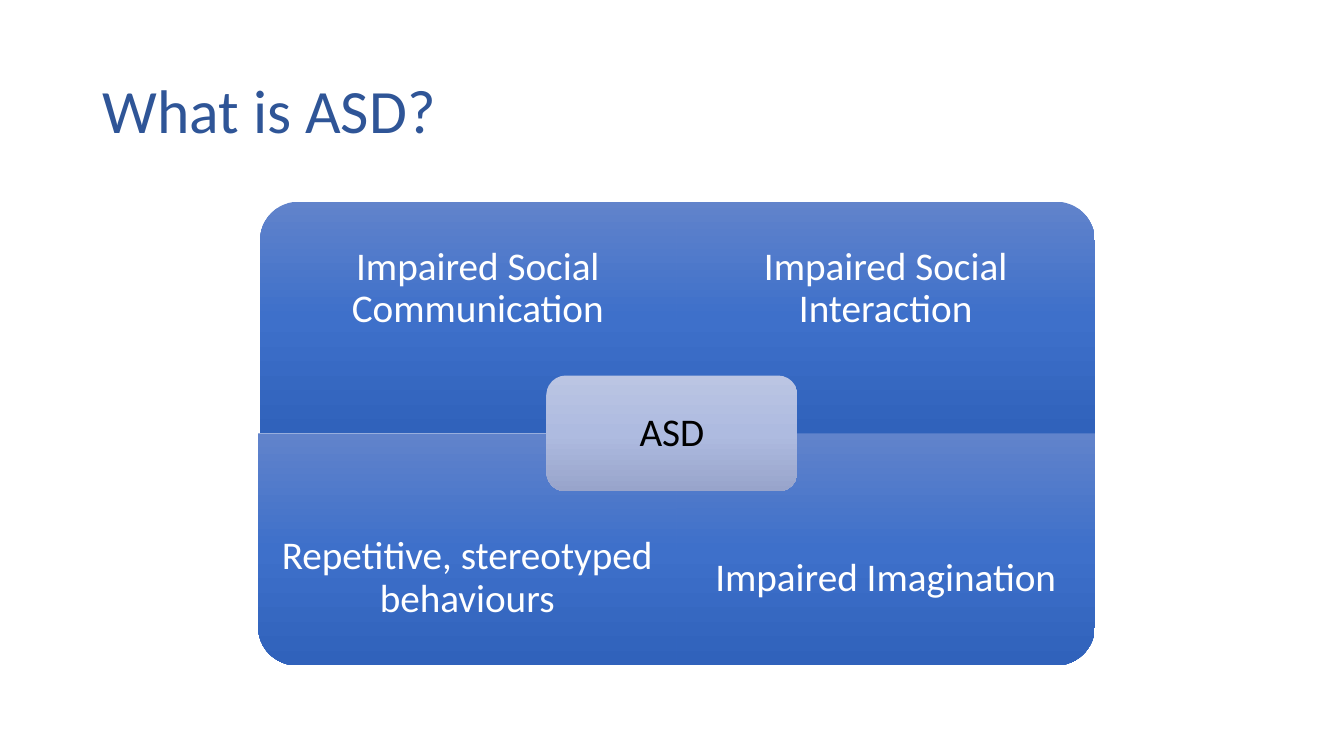
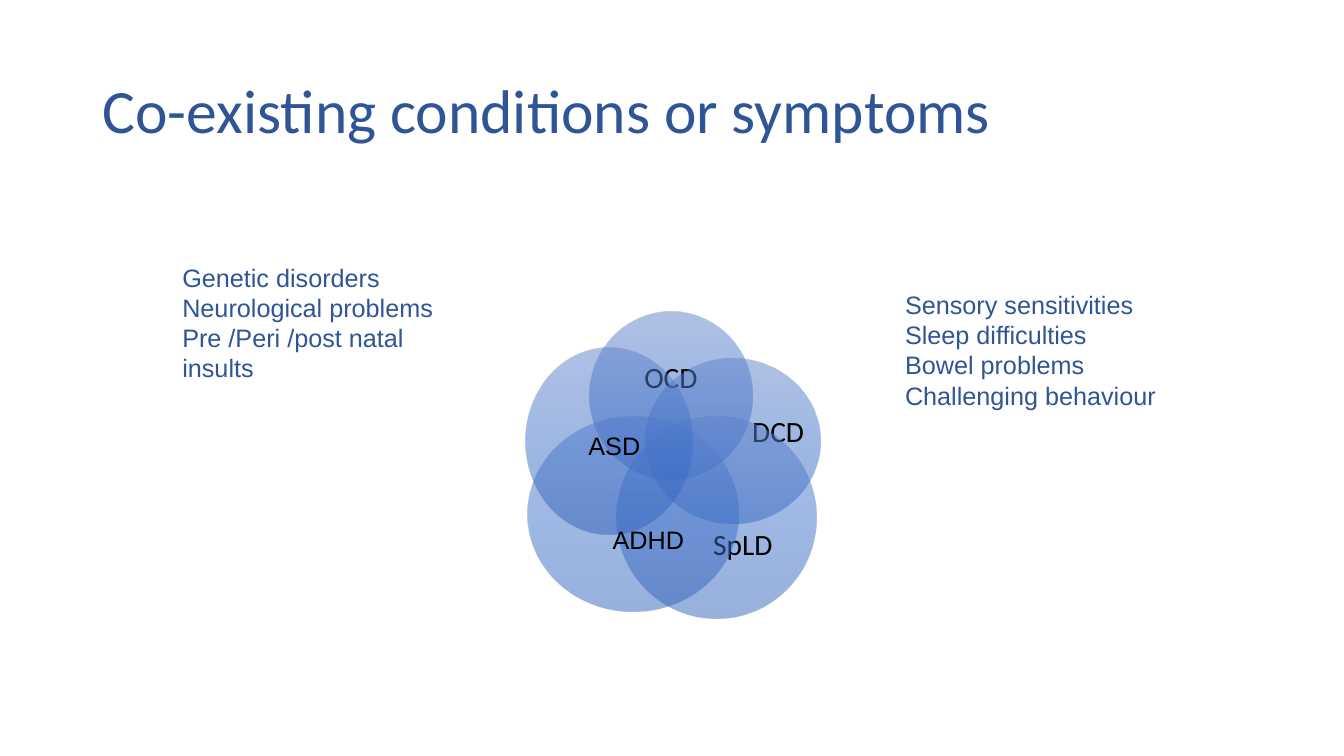
from lxml.etree import SubElement
from pptx import Presentation
from pptx.dml.color import RGBColor
from pptx.enum.shapes import MSO_SHAPE as SHAPE
from pptx.enum.text import MSO_ANCHOR as ANCHOR, PP_ALIGN as ALIGN
from pptx.oxml.ns import qn
from pptx.util import Inches, Pt

W, H = Inches(13.333), Inches(7.5)

COLORS = {"title": "2F5597", "light": "FFFFFF", "dark": "000000"}
BLUE = ("6183CB", "3E70CA", "3062BB")
PALE = ("BBC5E3", "AEBBE0", "98A4CB")

TITLE = {"size": 44, "font": "Calibri", "color": "title", "line_spacing": 0.9,
         "anchor": ANCHOR.MIDDLE}
CENTERED = {"font": "Calibri", "alignment": ALIGN.CENTER, "line_spacing": 0.9,
            "anchor": ANCHOR.MIDDLE}
QUADRANT = {**CENTERED, "size": 28, "color": "light", "inset": 0.22}
CORE = {**CENTERED, "size": 28, "color": "dark", "inset": 0.12}
LABEL = {**CENTERED, "size": 21, "color": "dark", "inset": 0, "wrap": False}
PLAIN = {"size": 18, "font": "Arial", "color": "dark"}
NOTE = {**PLAIN, "color": "title"}


def share(x, y, w, h):
    """Turn percentages of the slide's size into lengths."""
    return [int(size * part / 100) for size, part in zip((W, H, W, H), (x, y, w, h))]


def write(sp, lines, fmt):
    tf = sp.text_frame
    tf.word_wrap = fmt.get("wrap", True)
    tf.vertical_anchor = fmt.get("anchor", ANCHOR.TOP)
    if "inset" in fmt:
        for side in ("left", "right", "top", "bottom"):
            setattr(tf, f"margin_{side}", Inches(fmt["inset"]))
    for i, line in enumerate(lines):
        p = tf.add_paragraph() if i else tf.paragraphs[0]
        for name in ("alignment", "line_spacing"):
            setattr(p, name, fmt.get(name))
        r = p.add_run()
        r.text = line
        for name, value in {"size": Pt(fmt["size"]), "name": fmt["font"]}.items():
            setattr(r.font, name, value)
        r.font.color.rgb = RGBColor.from_string(COLORS[fmt["color"]])


def add_text(s, box, lines, fmt):
    write(s.shapes.add_textbox(*share(*box)), lines, fmt)


def shade(sp, colors, opacity):
    """Fill from top to bottom, whatever the shape's rotation."""
    sp.fill.gradient()
    sp.fill.gradient_angle = 270
    grad = sp.element.spPr.find(qn("a:gradFill"))
    grad.set("rotWithShape", "0")
    stops = grad.find(qn("a:gsLst"))
    for stop in list(stops):
        stops.remove(stop)
    for i, color in enumerate(colors):
        stop = SubElement(stops, qn("a:gs"), pos=str(50000 * i))
        clr = SubElement(stop, qn("a:srgbClr"), val=color)
        if opacity < 100:
            SubElement(clr, qn("a:alpha"), val=str(opacity * 1000))


def add_shape(s, kind, box, colors=BLUE, opacity=100, turn=0):
    """Add a shape that covers the box after its turn."""
    x, y, w, h = share(*box)
    if turn % 180:
        x, y, w, h = x + (w - h) // 2, y + (h - w) // 2, h, w
    sp = s.shapes.add_shape(kind, x, y, w, h)
    sp.rotation = turn
    sp.shadow.inherit = False
    sp.line.fill.background()
    shade(sp, colors, opacity)
    return sp


def add_slide(prs, title):
    s = prs.slides.add_slide(prs.slide_layouts[6])
    add_text(s, (6.9, 5.33, 86.25, 19.33), [title], TITLE)
    return s


def add_matrix(s):
    top, w, h = 26.67, 31.13, 30.67
    left, middle = 19.2, 50.33
    quadrants = [
        ("Impaired Social Communication", 19.35, 32.4, 0, 270),
        ("Impaired Social Interaction", middle, w, 0, 0),
        ("Repetitive, stereotyped behaviours", left, w, 1, 180),
        ("Impaired Imagination", middle, w, 1, 90),
    ]
    for text, x, width, row, turn in quadrants:
        y = top + row * h
        add_shape(s, SHAPE.ROUND_1_RECTANGLE, (x, y, width, h), turn=turn)
        add_text(s, (x, y + row * h / 4, width, h * 3 / 4), [text], QUADRANT)
    core_w, core_h = w * 0.6, h / 2
    core = add_shape(s, SHAPE.ROUNDED_RECTANGLE,
                     (50 - core_w / 2, top + h - core_h / 2, core_w, core_h), PALE)
    write(core, ["ASD"], CORE)


def add_venn(s):
    circles = [
        ((43.88, 41.2, 12.08, 22.27), "OCD", (47.93, 47.87, 3.98, 4.4)),
        ((48, 47.47, 13.05, 21.73), "DCD", (53.85, 54.53, 8.1, 5.6)),
        ((45.9, 55.07, 14.85, 26.8), "SpLD", (51.75, 67.87, 7.05, 8.67)),
        ((39.23, 55.07, 15.68, 25.87), None, None),
        ((39.08, 46, 12.45, 24.67), None, None),
    ]
    for circle, text, box in circles:
        add_shape(s, SHAPE.OVAL, circle, opacity=50)
        if text:
            add_text(s, box, [text], LABEL)
    add_text(s, (43.05, 56.27, 5.55, 5.33), ["ASD"], PLAIN)
    add_text(s, (44.85, 68.67, 7.5, 5.33), ["ADHD"], PLAIN)


def main():
    prs = Presentation()
    prs.slide_width, prs.slide_height = W, H

    add_matrix(add_slide(prs, "What is ASD?"))

    s = add_slide(prs, "Co-existing conditions or symptoms")
    add_venn(s)
    add_text(s, (12.83, 34, 23.7, 17.47),
             ["Genetic disorders", "Neurological problems",
              "Pre /Peri /post natal insults"], NOTE)
    add_text(s, (66.6, 37.6, 22.28, 17.47),
             ["Sensory sensitivities", "Sleep difficulties",
              "Bowel problems", "Challenging behaviour"], NOTE)

    prs.save("out.pptx")


if __name__ == "__main__":
    main()
